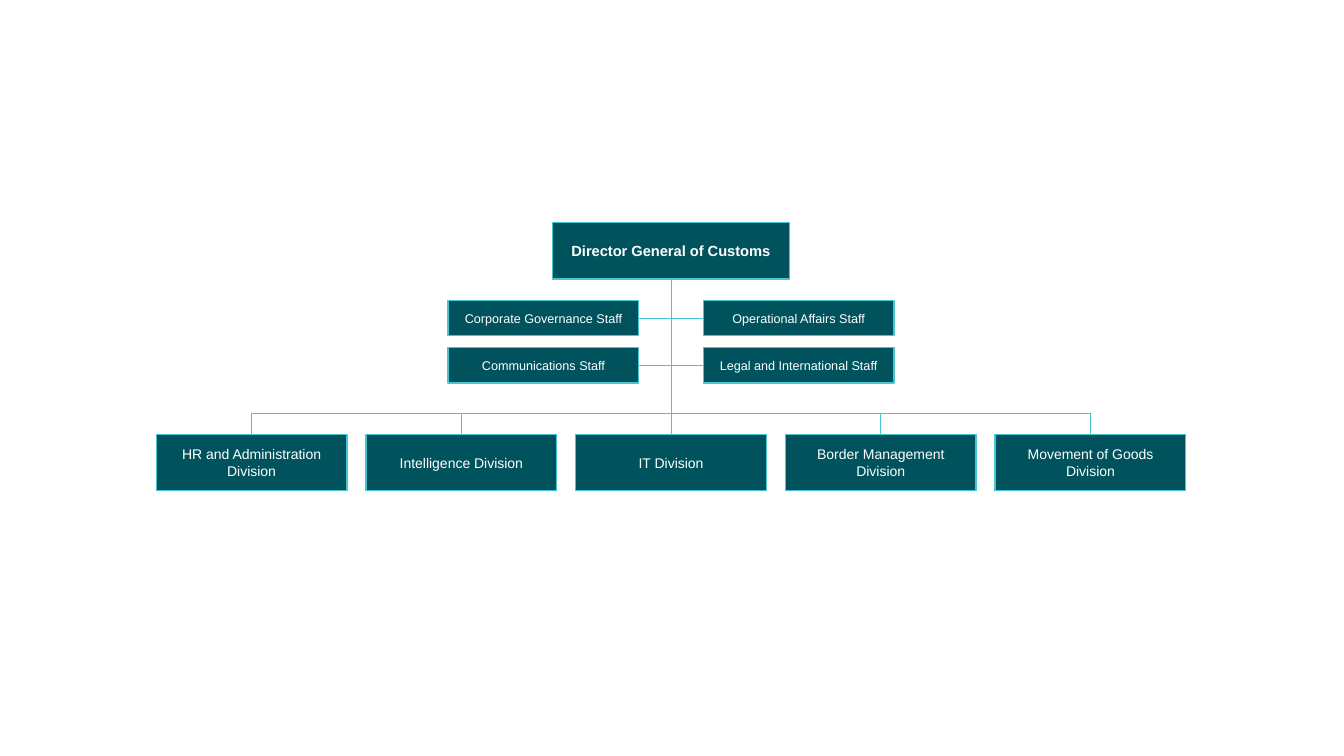
import pptx
import pptx.util
import pptx.dml.color
import pptx.enum.shapes
import pptx.enum.text
import pptx.oxml

Inches = pptx.util.Inches
Pt = pptx.util.Pt
COLORS = {"box": "00535C", "line": "49C4D1", "text": "FFFFFF"}
TOP, LEFT, BOTTOM, RIGHT = 0, 1, 2, 3
STAFF = [
    ("Corporate Governance Staff", "Operational Affairs Staff"),
    ("Communications Staff", "Legal and International Staff"),
]
DIVISIONS = [
    "HR and Administration Division",
    "Intelligence Division",
    "IT Division",
    "Border Management Division",
    "Movement of Goods Division",
]


def color(name):
    """Return the named palette colour."""
    return pptx.dml.color.RGBColor.from_string(COLORS[name])


def add_unit(slide, label, left, top, width, height, size, bold=False):
    """Add one labelled unit of the organisation."""
    unit = slide.shapes.add_shape(
        pptx.enum.shapes.MSO_SHAPE.RECTANGLE,
        Inches(left), Inches(top), Inches(width), Inches(height))
    unit.shadow.inherit = False
    unit.fill.solid()
    unit.fill.fore_color.rgb = color("box")
    unit.line.color.rgb = color("line")
    unit.line.width = Pt(1)
    frame = unit.text_frame
    frame.word_wrap = True
    frame.vertical_anchor = pptx.enum.text.MSO_ANCHOR.MIDDLE
    paragraph = frame.paragraphs[0]
    paragraph.alignment = pptx.enum.text.PP_ALIGN.CENTER
    run = paragraph.add_run()
    run.text = label
    run.font.name = "Arial"
    run.font.size = Pt(size)
    run.font.bold = bold
    run.font.color.rgb = color("text")
    return unit


def add_link(slide, x1, y1, x2, y2):
    """Add a thin straight line between two points in inches."""
    link = slide.shapes.add_connector(
        pptx.enum.shapes.MSO_CONNECTOR.STRAIGHT,
        Inches(x1), Inches(y1), Inches(x2), Inches(y2))
    link.line.color.rgb = color("line")
    link.line.width = Pt(0.5)
    properties = link._element.spPr
    properties.append(properties.makeelement(pptx.oxml.ns.qn("a:effectLst"), {}))
    return link


def add_staff(slide, left, top, width, height):
    """Add the staff units in two columns, each linked to the central trunk."""
    unit_width, unit_height = 1.89, 0.35
    row_pitch = height - unit_height
    trunk = left + width / 2
    for row, (left_label, right_label) in enumerate(STAFF):
        y = top + row * row_pitch
        middle = y + unit_height / 2
        right_column = left + width - unit_width
        for label, x, edge, side in (
                (left_label, left, left + unit_width, RIGHT),
                (right_label, right_column, right_column, LEFT)):
            unit = add_unit(slide, label, x, y, unit_width, unit_height, 9)
            link = add_link(slide, edge, middle, trunk, middle)
            link.begin_connect(unit, side)


def add_divisions(slide, left, top, width, height):
    """Add the row of divisions under a shared bar and return the central one."""
    unit_width, drop = 1.89, 0.21
    pitch = (width - unit_width) / (len(DIVISIONS) - 1)
    bar = top - drop
    centers = [left + unit_width / 2 + i * pitch for i in range(len(DIVISIONS))]
    add_link(slide, centers[0], bar, centers[-1], bar)
    units = []
    for label, center in zip(DIVISIONS, centers):
        unit = add_unit(slide, label, center - unit_width / 2, top,
                        unit_width, height, 10)
        units.append(unit)
        if center != centers[len(centers) // 2]:
            add_link(slide, center, bar, center, top).end_connect(unit, TOP)
    return units[len(units) // 2]


def add_organisation(slide, left, top, width, height):
    """Add the whole chart: director, staff and divisions."""
    center = left + width / 2
    director_width, staff_width, unit_height = 2.35, 4.42, 0.56
    divisions_top = top + height - unit_height
    director = add_unit(slide, "Director General of Customs",
                        center - director_width / 2, top,
                        director_width, unit_height, 10.5, bold=True)
    central_division = add_divisions(slide, left, divisions_top, width, unit_height)
    trunk = add_link(slide, center, top + unit_height, center, divisions_top)
    trunk.begin_connect(director, BOTTOM)
    trunk.end_connect(central_division, TOP)
    add_staff(slide, center - staff_width / 2, top + 0.77, staff_width, 0.82)


def main():
    """Build and save the slide."""
    presentation = pptx.Presentation()
    presentation.slide_width = Inches(13.33)
    presentation.slide_height = Inches(7.5)
    slide = presentation.slides.add_slide(presentation.slide_layouts[6])
    add_organisation(slide, 1.55, 2.21, 10.21, 2.66)
    presentation.save("out.pptx")


if __name__ == "__main__":
    main()
